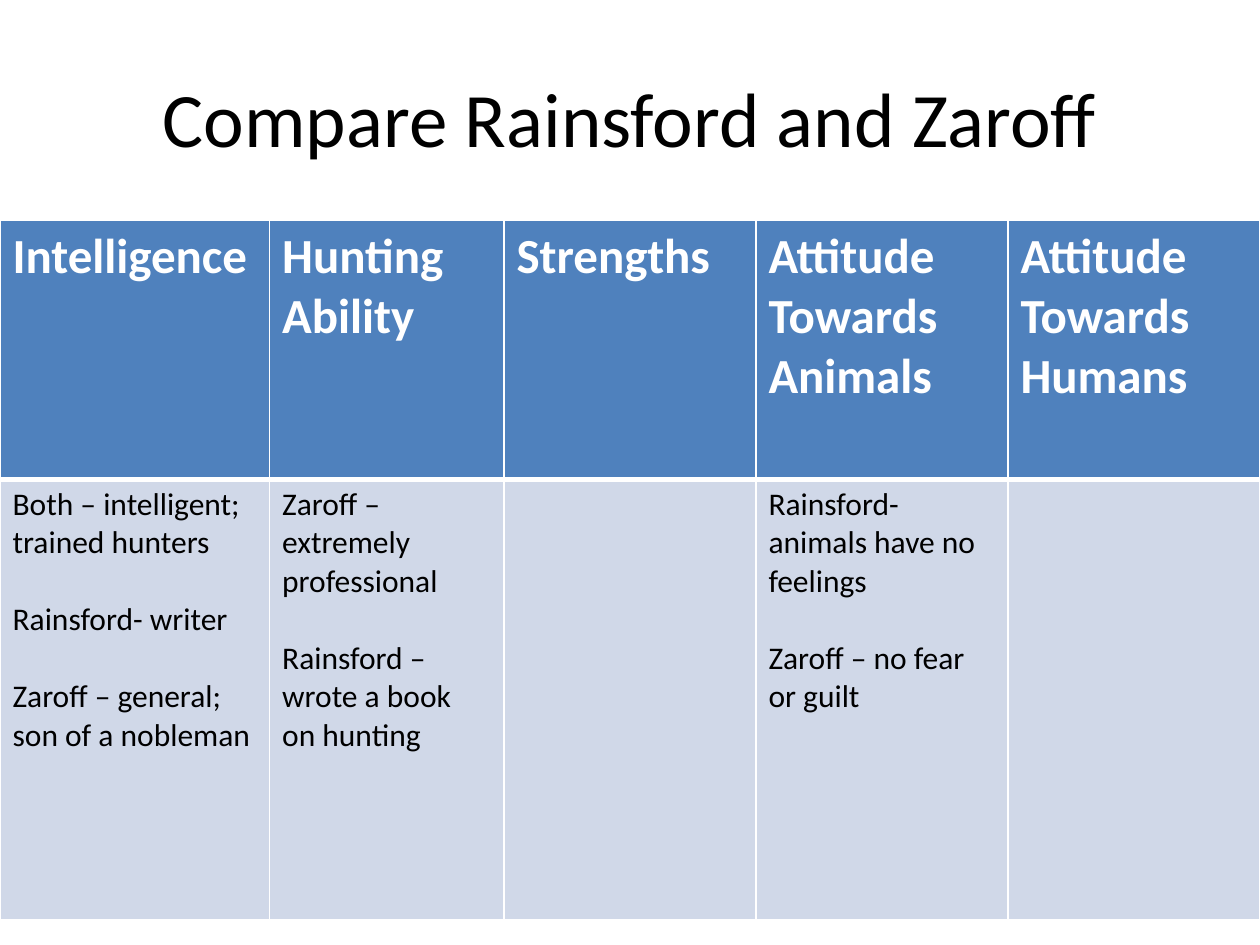
from lxml.etree import SubElement
from pptx import Presentation
from pptx.dml.color import RGBColor
from pptx.enum.text import MSO_ANCHOR, PP_ALIGN
from pptx.oxml.ns import qn
from pptx.util import Inches, Pt

WIDTH, HEIGHT = Inches(10), Inches(7.5)
COLUMN_SHARES = (0.214, 0.186, 0.2, 0.2, 0.2)
ROW_SHARES = (0.37, 0.63)
BLACK, WHITE, BLUE, PALE_BLUE = "000000", "FFFFFF", "4F81BD", "D0D8E8"

COMPARISON = (
    ("Intelligence", ("Both – intelligent; trained hunters", "Rainsford- writer",
                      "Zaroff – general; son of a nobleman")),
    ("Hunting Ability", ("Zaroff – extremely professional",
                         "Rainsford – wrote a book on hunting")),
    ("Strengths", ()),
    ("Attitude Towards Animals", ("Rainsford- animals have no feelings",
                                  "Zaroff – no fear or guilt")),
    ("Attitude Towards Humans", ()),
)


def color(value):
    """Return the colour for a hex string."""
    return RGBColor.from_string(value)


def write_text(frame, *texts, size, fill=BLACK, bold=False, align=PP_ALIGN.LEFT, gap=0):
    """Write one paragraph per text, with a gap in points between them."""
    for index, text in enumerate(texts):
        paragraph = frame.add_paragraph() if index else frame.paragraphs[0]
        paragraph.alignment = align
        paragraph.space_before = Pt(gap if index else 0)
        run = paragraph.add_run()
        run.text = text
        run.font.name = "Calibri"
        run.font.size = Pt(size)
        run.font.bold = bold
        run.font.color.rgb = color(fill)


def format_cell(cell, fill, **border_widths):
    """Give a cell its fill and white borders, with widths in points by side."""
    properties = cell._tc.get_or_add_tcPr()
    for side in "LRTB":
        width = Pt(border_widths.get(side, 1))
        line = SubElement(properties, qn(f"a:ln{side}"), w=str(width))
        solid = SubElement(line, qn("a:solidFill"))
        SubElement(solid, qn("a:srgbClr"), val=WHITE)
    cell.fill.solid()
    cell.fill.fore_color.rgb = color(fill)


def place_title(slide, left, top, width, height):
    """Place the centred slide title in its box."""
    title = slide.shapes.title
    title.left, title.top, title.width, title.height = left, top, width, height
    title.text_frame.vertical_anchor = MSO_ANCHOR.MIDDLE
    write_text(title.text_frame, "Compare Rainsford and Zaroff", size=44,
               align=PP_ALIGN.CENTER)


def place_comparison(slide, left, top, width, height):
    """Place the comparison table in its box."""
    table = slide.shapes.add_table(2, len(COMPARISON), left, top, width, height).table
    for row, share in zip(table.rows, ROW_SHARES):
        row.height = int(height * share)
    for index, (heading, notes) in enumerate(COMPARISON):
        table.columns[index].width = int(width * COLUMN_SHARES[index])
        header, body = table.cell(0, index), table.cell(1, index)
        format_cell(header, BLUE, B=3)
        format_cell(body, PALE_BLUE, T=3)
        write_text(header.text_frame, heading, size=28, fill=WHITE, bold=True)
        write_text(body.text_frame, *notes, size=18, gap=22)


def main():
    """Build and save the presentation."""
    presentation = Presentation()
    presentation.slide_width, presentation.slide_height = WIDTH, HEIGHT
    slide = presentation.slides.add_slide(presentation.slide_layouts[5])
    place_title(slide, int(WIDTH * 0.05), int(HEIGHT * 0.04),
                int(WIDTH * 0.9), int(HEIGHT / 6))
    place_comparison(slide, 0, int(HEIGHT * 7 / 30), WIDTH, int(HEIGHT * 0.74))
    presentation.save("out.pptx")


if __name__ == "__main__":
    main()
